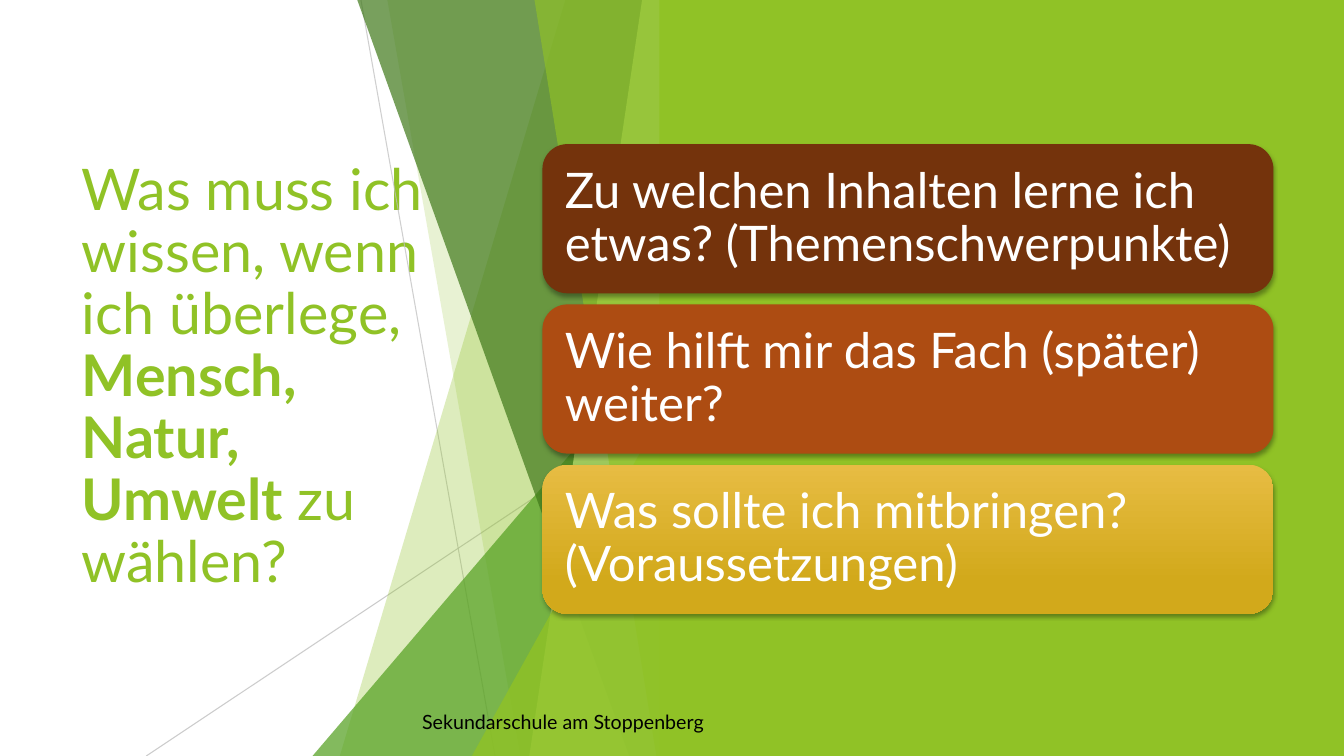
from lxml.etree import SubElement
from pptx import Presentation
from pptx.dml.color import RGBColor
from pptx.enum.shapes import MSO_CONNECTOR, MSO_SHAPE
from pptx.enum.text import MSO_ANCHOR, MSO_AUTO_SIZE, PP_ALIGN
from pptx.oxml.ns import qn
from pptx.util import Inches, Pt

COLORS = {
    "lime": "90C226", "pale": "C0E474", "leaf": "54A021", "forest": "3F7819",
    "ray": "BFBFBF", "white": "FFFFFF", "black": "000000",
    "brown": "74330C", "rust": "AD4C12", "gold_top": "E7BC43", "gold": "D2A91B",
}
FONT = "Lato"
TOP, BOTTOM = -0.01, 7.5
FACET_RIGHT = 6.66
CARD_TOP, CARD_STEP = 1.43, 1.59


def rgb(name):
    return RGBColor.from_string(COLORS[name])


def set_alpha(color_format_parent, percent):
    """Make the solid colour below the given XML element translucent."""
    color = color_format_parent.find(qn("a:solidFill")).find(qn("a:srgbClr"))
    SubElement(color, qn("a:alpha"), val=str(percent * 1000))


def paint(shape, color, opacity=100):
    shape.shadow.inherit = False
    shape.line.fill.background()
    shape.fill.solid()
    shape.fill.fore_color.rgb = rgb(color)
    if opacity < 100:
        set_alpha(shape.fill._xPr, opacity)


def add_ray(slide, start, end, opacity):
    ray = slide.shapes.add_connector(
        MSO_CONNECTOR.STRAIGHT, *map(Inches, (*start, *end)))
    ray.line.width = Pt(0.75)
    ray.line.color.rgb = rgb("ray")
    properties = ray._element.spPr
    set_alpha(properties.find(qn("a:ln")), opacity)
    SubElement(properties, qn("a:effectLst"))


def add_facet(slide, top_left, bottom_left, color, opacity):
    """Draw a full-height facet with a slanted left and a straight right edge."""
    corners = [(FACET_RIGHT, TOP), (FACET_RIGHT, BOTTOM), (bottom_left, BOTTOM)]
    builder = slide.shapes.build_freeform(Inches(top_left), Inches(TOP))
    builder.add_line_segments([(Inches(x), Inches(y)) for x, y in corners])
    paint(builder.convert_to_shape(), color, opacity)


def add_corner(slide, left, top, color, opacity):
    """Draw a triangle rising from the bottom edge to the facets' right edge."""
    corner = slide.shapes.add_shape(
        MSO_SHAPE.ISOSCELES_TRIANGLE, Inches(left), Inches(top),
        Inches(FACET_RIGHT - left), Inches(BOTTOM - top))
    corner.adjustments[0] = 1
    paint(corner, color, opacity)


def add_run(paragraph, text, size, color, bold=False):
    run = paragraph.add_run()
    run.text = text
    run.font.name = FONT
    run.font.size = Pt(size)
    run.font.bold = bold
    run.font.color.rgb = rgb(color)


def fill_title(slide):
    title = slide.shapes.title
    title.left, title.top, title.width, title.height = map(
        Inches, (0.71, 1.51, 3.88, 4.48))
    frame = title.text_frame
    frame.word_wrap = True
    frame.auto_size = MSO_AUTO_SIZE.NONE
    frame.vertical_anchor = MSO_ANCHOR.MIDDLE
    question = frame.paragraphs[0]
    question.alignment = PP_ALIGN.LEFT
    question.line_spacing = 0.9
    add_run(question, "Was muss ich wissen, wenn ich überlege, ", 41, "lime")
    add_run(question, "Mensch, Natur, Umwelt ", 41, "lime", bold=True)
    add_run(question, "zu wählen?", 41, "lime")


def add_card_shadow(card):
    effects = card._element.spPr.find(qn("a:effectLst"))
    shadow = SubElement(
        effects, qn("a:outerShdw"), blurRad=str(Pt(3)), dist=str(Pt(2)),
        dir="5400000", algn="ctr", rotWithShape="0")
    color = SubElement(shadow, qn("a:srgbClr"), val=COLORS["black"])
    SubElement(color, qn("a:alpha"), val="35000")


def add_card(slide, top, text, color, top_color=None):
    card = slide.shapes.add_shape(
        MSO_SHAPE.ROUNDED_RECTANGLE, Inches(5.38), Inches(top),
        Inches(7.25), Inches(1.48))
    paint(card, color)
    if top_color:
        card.fill.gradient()
        card.fill.gradient_angle = 270
        stops = zip(card.fill.gradient_stops, (0, 0.78), (top_color, color))
        for stop, position, stop_color in stops:
            stop.position = position
            stop.color.rgb = rgb(stop_color)
    add_card_shadow(card)
    frame = card.text_frame
    frame.word_wrap = True
    frame.vertical_anchor = MSO_ANCHOR.MIDDLE
    frame.margin_left = frame.margin_right = Inches(0.15)
    frame.margin_top = frame.margin_bottom = Inches(0.15)
    paragraph = frame.paragraphs[0]
    paragraph.alignment = PP_ALIGN.LEFT
    paragraph.line_spacing = 0.9
    add_run(paragraph, text, 35, "white")


def add_school_name(slide):
    school = slide.shapes.add_textbox(
        Inches(4), Inches(6.83), Inches(3.17), Inches(0.5))
    frame = school.text_frame
    frame.word_wrap = True
    frame.vertical_anchor = MSO_ANCHOR.BOTTOM
    frame.paragraphs[0].alignment = PP_ALIGN.CENTER
    add_run(frame.paragraphs[0], "Sekundarschule am Stoppenberg", 14, "black")


def add_backdrop(slide):
    add_ray(slide, (3.58, 0), (4.91, 7.5), 75)
    add_ray(slide, (6.66, 4.03), (1.45, 7.5), 80)
    add_facet(slide, 5.61, 3.37, "lime", 30)
    add_facet(slide, 3.84, 5.16, "lime", 20)
    add_corner(slide, 3.1, 3.33, "leaf", 72)
    add_facet(slide, 3.54, 6.24, "forest", 70)
    add_facet(slide, 6.37, 5.25, "pale", 70)
    add_facet(slide, 5.3, 6.51, "lime", 65)
    add_corner(slide, 4.68, 3.93, "lime", 80)
    panel = slide.shapes.add_shape(
        MSO_SHAPE.RECTANGLE, Inches(6.54), 0, Inches(6.79), Inches(7.5))
    paint(panel, "lime")


def main():
    deck = Presentation()
    deck.slide_width, deck.slide_height = Inches(13.33), Inches(7.5)
    slide = deck.slides.add_slide(deck.slide_layouts[5])
    fill_title(slide)
    add_backdrop(slide)
    cards = [
        ("Zu welchen Inhalten lerne ich etwas? (Themenschwerpunkte)", "brown"),
        ("Wie hilft mir das Fach (später) weiter?", "rust"),
        ("Was sollte ich mitbringen? (Voraussetzungen)", "gold", "gold_top"),
    ]
    for row, card in enumerate(cards):
        add_card(slide, CARD_TOP + row * CARD_STEP, *card)
    add_school_name(slide)
    deck.save("out.pptx")


if __name__ == "__main__":
    main()
